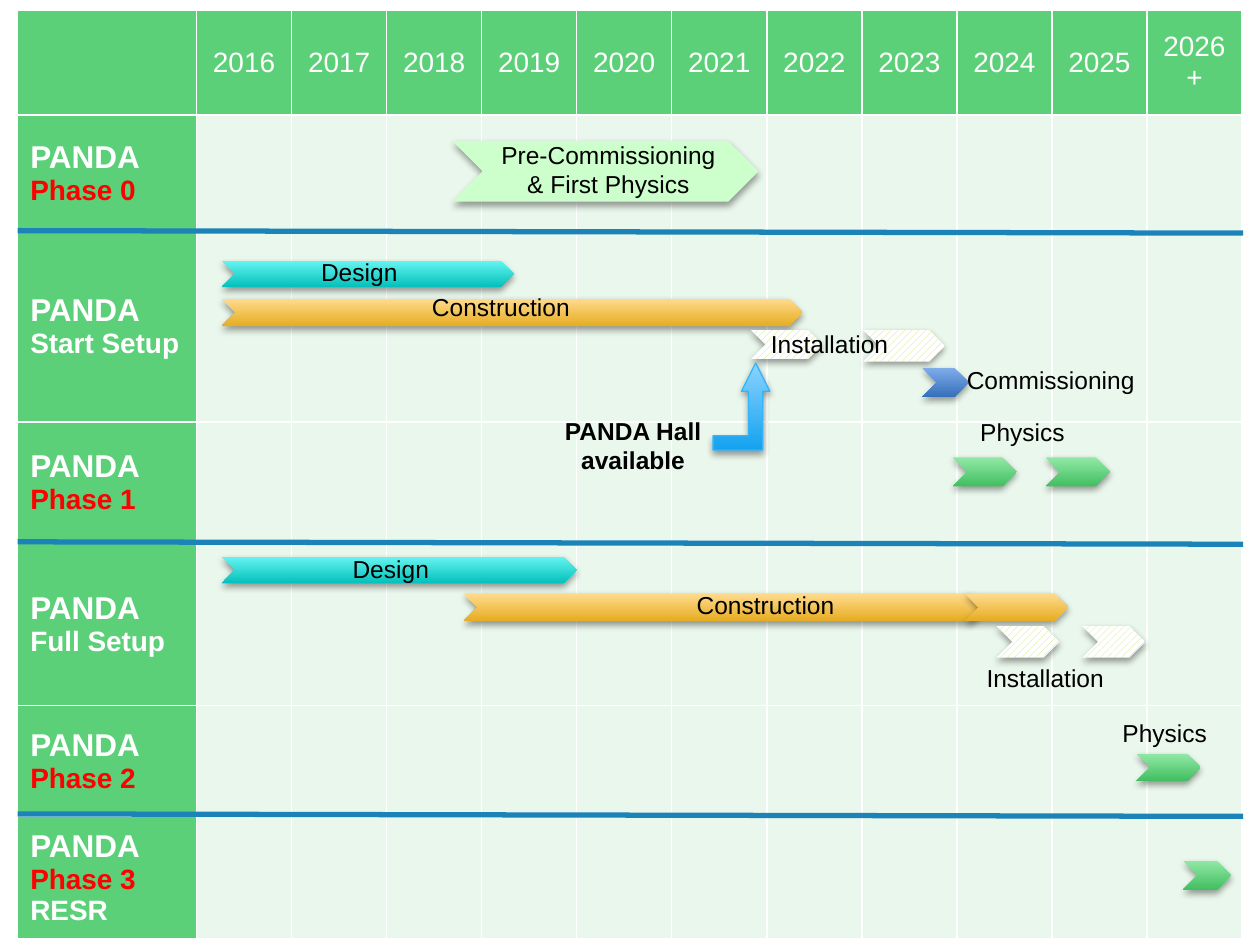
from lxml.etree import SubElement
from pptx import Presentation
from pptx.dml.color import RGBColor
from pptx.enum.dml import MSO_PATTERN as Pattern
from pptx.enum.shapes import MSO_CONNECTOR as Link, MSO_SHAPE as Shape
from pptx.enum.text import MSO_ANCHOR as Anchor, PP_ALIGN as Align
from pptx.oxml.ns import qn
from pptx.util import Pt

GREEN, PALE, WHITE, RED, BLACK = "5BD078", "EAF7EC", "FFFFFF", "FF0000", "000000"
YEARS = [str(y) for y in range(2016, 2026)] + ["2026+"]
ROWS = [
    (66.2, [("Phase 0", RED)]),
    (109.4, [("Start Setup", WHITE)]),
    (69.1, [("Phase 1", RED)]),
    (92.9, [("Full Setup", WHITE)]),
    (63.4, [("Phase 2", RED)]),
    (69.8, [("Phase 3", RED), (" RESR", WHITE)]),
]
LEFT, TOP, WIDTH, HEAD, SIDE = 10.1, 5.8, 699.8, 59.8, 102.2

PAINT = {
    "design": ("65F5F1", "04C0BB"),
    "build": ("FFDB8E", "E6AD22"),
    "commission": ("80ACEA", "3570BA"),
    "physics": ("92E8A6", "41BF60"),
    "hall": ("8CD3FF", "14A2EF"),
    "early": ("CCFFCC",),
}
BARS = [
    ("early", 258.5, 80.6, 175, 34.6),
    ("design", 126.7, 149, 167, 15.1),
    ("build", 126.7, 170.6, 331.9, 15.8),
    ("install", 429.1, 188.6, 41, 16.6),
    ("install", 493.2, 188.6, 46.8, 18),
    ("commission", 527, 210.2, 26.6, 16.6),
    ("physics", 544.3, 261.4, 36.7, 16.6),
    ("physics", 597.6, 261.4, 36.7, 16.6),
    ("design", 126.7, 318.2, 203, 15.1),
    ("build", 265, 339.1, 298, 15.8),
    ("build", 551.5, 339.1, 59, 15.8),
    ("install", 569.5, 357.8, 36, 18),
    ("install", 618.5, 357.8, 36, 18),
    ("physics", 649.4, 430.6, 36.7, 15.8),
    ("physics", 676.1, 491.8, 27.4, 16.6),
]
HALL = (407.5, 207.4, 32.4, 49.7)
LABELS = [
    (["Pre-Commissioning", "& First Physics"], 275, 76.3, 145.4, 42.5, {}),
    (["Design"], 176.4, 143.3, 60.5, 25.2, {"align": Align.LEFT}),
    (["Construction"], 229, 163.4, 114.5, 25.2, {}),
    (["Installation"], 429.8, 184.3, 88.6, 25.2, {}),
    (["Commissioning"], 540.7, 205.2, 119.5, 25.2, {}),
    (["Physics"], 553, 234.7, 65.5, 25.2, {"align": Align.LEFT}),
    (["PANDA Hall available"], 285.1, 234, 153.4, 42.5, {"bold": True}),
    (["Design"], 194.4, 313.2, 60.5, 25.2, {"align": Align.LEFT}),
    (["Construction"], 380.2, 333.4, 114.5, 25.2, {}),
    (["Installation"], 553, 375.1, 88.6, 25.2, {}),
    (["Physics"], 634.3, 406.8, 65.5, 25.2, {"align": Align.LEFT}),
]
RULES = [131.8, 309.6, 465.1]


def tint(code):
    return RGBColor.from_string(code)


def write(frame, lines, size=14, color=BLACK, bold=False, align=Align.CENTER):
    for i, line in enumerate(lines):
        para = frame.paragraphs[0] if i == 0 else frame.add_paragraph()
        para.alignment = align
        for part in [(line,)] if isinstance(line, str) else line:
            words, hue, pts = part + (color, size)[len(part) - 1:]
            run = para.add_run()
            run.text = words
            font = run.font
            font.name, font.size, font.bold = "Arial", Pt(pts), bold
            font.color.rgb = tint(hue)


def shade(shape):
    shape.shadow.inherit = False
    effects = shape._element.spPr.find(qn("a:effectLst"))
    drop = SubElement(effects, qn("a:outerShdw"), blurRad=str(Pt(4)),
                      dist=str(Pt(2)), dir="5400000", rotWithShape="0")
    color = SubElement(drop, qn("a:srgbClr"), val=BLACK)
    SubElement(color, qn("a:alpha"), val="38000")


def draw(form, kind, box):
    shape = slide.shapes.add_shape(form, *map(Pt, box))
    fill, hues = shape.fill, PAINT.get(kind)
    if hues is None:
        fill.patterned()
        fill.pattern = Pattern.WIDE_UPWARD_DIAGONAL
        fill.fore_color.rgb, fill.back_color.rgb = tint("CAE67B"), tint(WHITE)
    elif len(hues) == 1:
        fill.solid()
        fill.fore_color.rgb = tint(hues[0])
    else:
        fill.gradient()
        fill.gradient_angle = 270
        for stop, hue in zip(fill.gradient_stops, hues):
            stop.color.rgb = tint(hue)
    shape.line.fill.background()
    shade(shape)
    return shape


deck = Presentation()
deck.slide_width, deck.slide_height = Pt(720), Pt(540)
slide = deck.slides.add_slide(deck.slide_layouts[6])

heights = [HEAD] + [h for h, _ in ROWS]
table = slide.shapes.add_table(
    len(heights), len(YEARS) + 1, Pt(LEFT), Pt(TOP), Pt(WIDTH), Pt(sum(heights))).table
table.horz_banding = False
for i, col in enumerate(table.columns):
    col.width = Pt((WIDTH - SIDE) / len(YEARS) if i else SIDE)
for r, (row, height) in enumerate(zip(table.rows, heights)):
    row.height = Pt(height)
    for c, cell in enumerate(row.cells):
        cell.fill.solid()
        cell.fill.fore_color.rgb = tint(PALE if r and c else GREEN)
        cell.vertical_anchor = Anchor.MIDDLE
        if r == 0 and c:
            write(cell.text_frame, [YEARS[c - 1]], size=16, color=WHITE)
        elif r and c == 0:
            write(cell.text_frame, [[("PANDA", WHITE, 18)], ROWS[r - 1][1]],
                  size=16, bold=True, align=Align.LEFT)

for kind, *box in BARS:
    draw(Shape.CHEVRON, kind, box)
arrow = draw(Shape.BENT_UP_ARROW, "hall", HALL)
arrow.adjustments[2] = 0.5
arrow.line.color.rgb = tint("31B6FD")
arrow.line.width = Pt(0.75)

for lines, *box, style in LABELS:
    frame = slide.shapes.add_textbox(*map(Pt, box)).text_frame
    frame.word_wrap = True
    write(frame, lines, **style)

for y in RULES:
    rule = slide.shapes.add_connector(
        Link.STRAIGHT, Pt(LEFT), Pt(y), Pt(LEFT + WIDTH + 0.5), Pt(y + 1.4))
    rule.line.color.rgb = tint("1C83B9")
    rule.line.width = Pt(3)
    SubElement(rule._element.spPr, qn("a:effectLst"))

deck.save("out.pptx")
